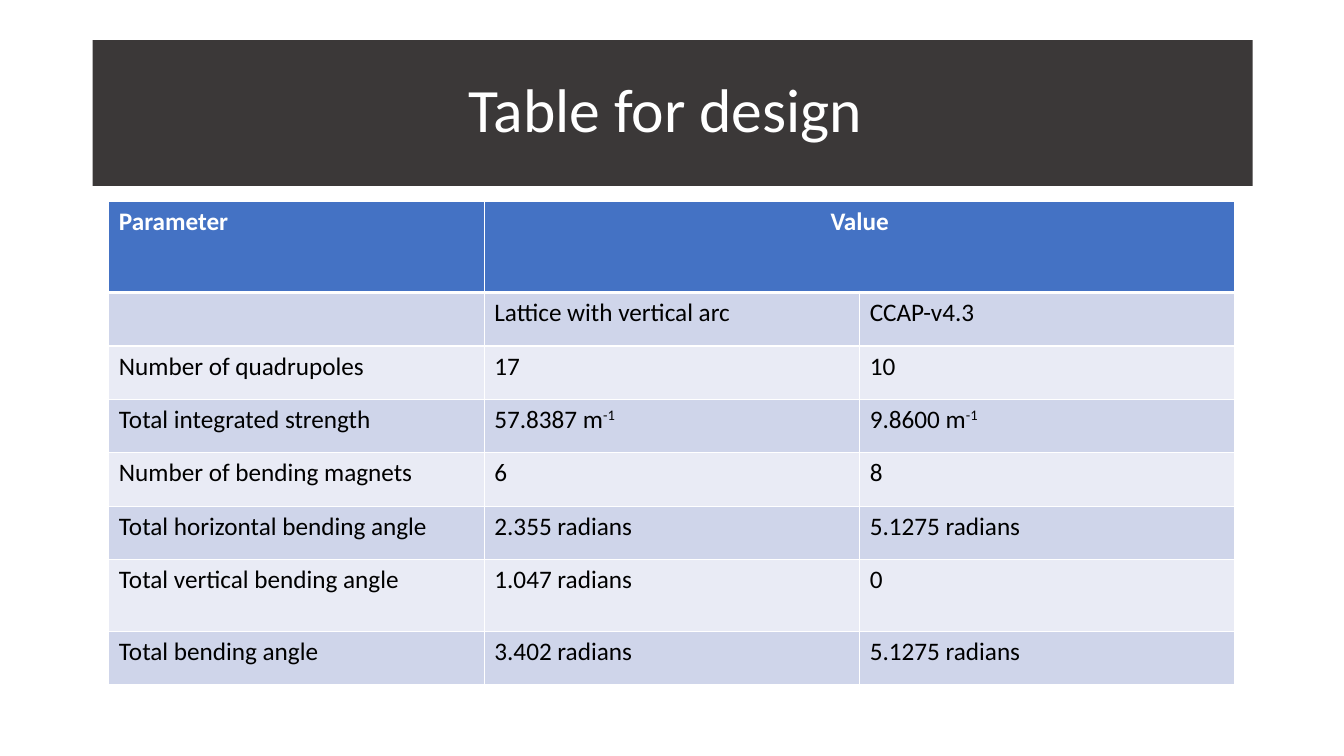
from dataclasses import dataclass

import lxml.etree
import pptx
import pptx.dml.color
import pptx.enum.text
import pptx.oxml.ns
import pptx.table
import pptx.text.text
import pptx.util

SLIDE_WIDTH = pptx.util.Inches(13.33)
SLIDE_HEIGHT = pptx.util.Inches(7.5)
FONT = "Calibri"
COLORS = {
    "banner": "3B3838",
    "header": "4472C4",
    "dark band": "CFD5EA",
    "light band": "E9EBF5",
    "light": "FFFFFF",
    "text": "000000",
}


@dataclass(frozen=True)
class Row:
    parameter: str
    vertical_arc: str
    ccap: str = ""
    height: float = 0.53  # inches


# A caret starts a superscript
ROWS = [
    Row("Parameter", "Value", height=0.9),
    Row("", "Lattice with vertical arc", "CCAP-v4.3"),
    Row("Number of quadrupoles", "17", "10"),
    Row("Total integrated strength", "57.8387 m^-1", "9.8600 m^-1"),
    Row("Number of bending magnets", "6", "8"),
    Row("Total horizontal bending angle", "2.355 radians", "5.1275 radians"),
    Row("Total vertical bending angle", "1.047 radians", "0", height=0.71),
    Row("Total bending angle", "3.402 radians", "5.1275 radians"),
]


def share_x(share: float) -> int:
    return round(SLIDE_WIDTH * share)


def share_y(share: float) -> int:
    return round(SLIDE_HEIGHT * share)


def rgb(name: str) -> pptx.dml.color.RGBColor:
    return pptx.dml.color.RGBColor.from_string(COLORS[name])


def format_font(paragraph: pptx.text.text._Paragraph, size: int, color: str, bold: bool = False) -> None:
    font = paragraph.font
    font.name = FONT
    font.size = pptx.util.Pt(size)
    font.bold = bold
    font.color.rgb = rgb(color)


def add_borders(cell: pptx.table._Cell, bottom: int) -> None:
    qn = pptx.oxml.ns.qn
    properties = cell._tc.get_or_add_tcPr()
    for side, points in {"L": 1, "R": 1, "T": 1, "B": bottom}.items():
        line = lxml.etree.SubElement(properties, qn(f"a:ln{side}"), w=str(pptx.util.Pt(points)))
        fill = lxml.etree.SubElement(line, qn("a:solidFill"))
        lxml.etree.SubElement(fill, qn("a:srgbClr"), val=COLORS["light"])


def fill_cell(cell: pptx.table._Cell, text: str, band: str) -> None:
    is_header = band == "header"
    add_borders(cell, bottom=3 if is_header else 1)
    cell.fill.solid()
    cell.fill.fore_color.rgb = rgb(band)
    paragraph = cell.text_frame.paragraphs[0]
    format_font(paragraph, 18, "light" if is_header else "text", bold=is_header)
    base, _, exponent = text.partition("^")
    if base:
        paragraph.add_run().text = base
    if exponent:
        superscript = paragraph.add_run()
        superscript.text = exponent
        superscript._r.get_or_add_rPr().set("baseline", "30000")


def add_title(slide: pptx.slide.Slide) -> None:
    title = slide.shapes.title
    title.left, title.top = share_x(0.069), share_y(0.053)
    title.width, title.height = share_x(0.863), share_y(0.193)
    title.fill.solid()
    title.fill.fore_color.rgb = rgb("banner")
    title.text_frame.text = "Table for design "
    title.text_frame.vertical_anchor = pptx.enum.text.MSO_ANCHOR.MIDDLE
    heading = title.text_frame.paragraphs[0]
    heading.alignment = pptx.enum.text.PP_ALIGN.CENTER
    heading.line_spacing = 0.9
    format_font(heading, 44, "light")


def add_design_table(slide: pptx.slide.Slide) -> None:
    height = pptx.util.Inches(sum(row.height for row in ROWS))
    design = slide.shapes.add_table(
        len(ROWS), 3, share_x(0.081), share_y(0.267), share_x(0.838), height
    ).table
    for index, row in enumerate(ROWS):
        design.rows[index].height = pptx.util.Inches(row.height)
        band = "header" if index == 0 else "dark band" if index % 2 else "light band"
        for column, text in enumerate((row.parameter, row.vertical_arc, row.ccap)):
            fill_cell(design.cell(index, column), text, band)

    # "Value" heads both lattice columns
    value = design.cell(0, 1)
    value.merge(design.cell(0, 2))
    value.text_frame.paragraphs[0].alignment = pptx.enum.text.PP_ALIGN.CENTER


def main() -> None:
    presentation = pptx.Presentation()
    presentation.slide_width = SLIDE_WIDTH
    presentation.slide_height = SLIDE_HEIGHT
    slide = presentation.slides.add_slide(presentation.slide_layouts.get_by_name("Title Only"))
    add_title(slide)
    add_design_table(slide)
    presentation.save("out.pptx")


if __name__ == "__main__":
    main()
